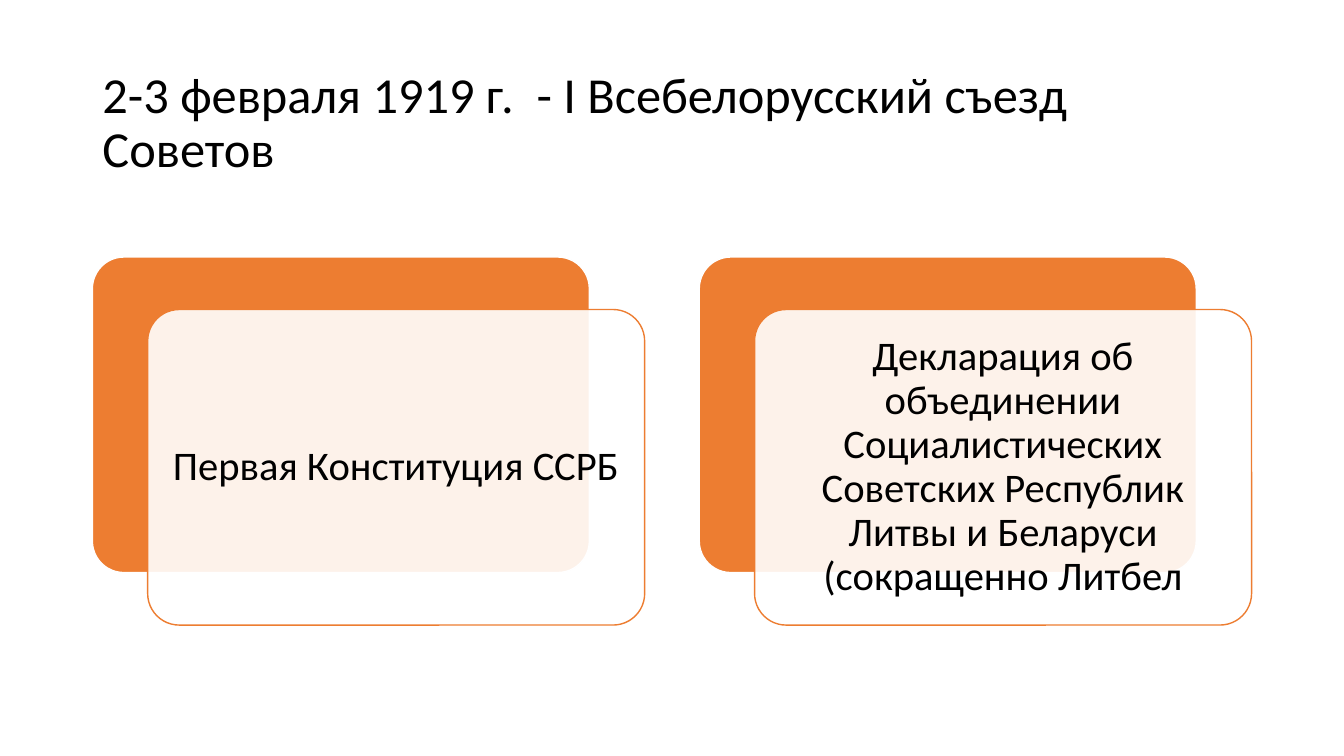
from dataclasses import dataclass

from lxml.etree import SubElement
from pptx import Presentation
from pptx.dml.color import RGBColor
from pptx.enum.shapes import MSO_SHAPE
from pptx.enum.text import MSO_ANCHOR, MSO_AUTO_SIZE, PP_ALIGN
from pptx.oxml.ns import qn
from pptx.util import Pt


@dataclass(frozen=True)
class Theme:
    font: str = "Calibri"
    title_size: float = 36
    card_size: float = 29
    text: RGBColor = RGBColor(0x00, 0x00, 0x00)
    accent: RGBColor = RGBColor(0xED, 0x7D, 0x31)
    paper: RGBColor = RGBColor(0xFF, 0xFF, 0xFF)
    card_opacity: int = 90
    corner: float = 0.1


THEME = Theme()
TITLE = "2-3 февраля 1919 г.  - I Всебелорусский съезд Советов"
DECISIONS = [
    "Первая Конституция ССРБ",
    "Декларация об объединении Социалистических Советских Республик "
    "Литвы и Беларуси (сокращенно Литбел",
]


def apply(target, formats):
    for name, value in formats.items():
        setattr(target, name, value)


def write_text(frame, wording, size, align, inset_x, inset_y, space_after=0):
    frame.text = wording
    apply(frame, {
        "word_wrap": True,
        "auto_size": MSO_AUTO_SIZE.NONE,
        "vertical_anchor": MSO_ANCHOR.MIDDLE,
        "margin_left": Pt(inset_x),
        "margin_right": Pt(inset_x),
        "margin_top": Pt(inset_y),
        "margin_bottom": Pt(inset_y),
    })
    paragraph = frame.paragraphs[0]
    apply(paragraph, {
        "alignment": align,
        "line_spacing": 0.9,
        "space_after": Pt(space_after),
    })
    font = paragraph.runs[0].font
    apply(font, {"name": THEME.font, "size": Pt(size)})
    font.color.rgb = THEME.text


def place_title(slide, left, top, width, height):
    title = slide.shapes.title
    apply(title, {"left": Pt(left), "top": Pt(top),
                  "width": Pt(width), "height": Pt(height)})
    write_text(title.text_frame, TITLE, THEME.title_size, PP_ALIGN.LEFT, 7.2, 3.6)


def add_panel(shapes, left, top, width, height, fill, line):
    panel = shapes.add_shape(MSO_SHAPE.ROUNDED_RECTANGLE,
                             Pt(left), Pt(top), Pt(width), Pt(height))
    panel.adjustments[0] = THEME.corner
    panel.shadow.inherit = False
    panel.fill.solid()
    panel.fill.fore_color.rgb = fill
    panel.line.color.rgb = line
    panel.line.width = Pt(1)
    return panel


def add_decision(shapes, wording, left, top, width, height):
    """Accent panel with a translucent text card shifted down and right."""
    shift_x, shift_y = 39.5, 37.5
    size = width - shift_x, height - shift_y
    add_panel(shapes, left, top, *size, THEME.accent, THEME.paper)
    card = add_panel(shapes, left + shift_x, top + shift_y, *size,
                     THEME.paper, THEME.accent)
    # Let the accent panel show through the card
    color = card.fill._xPr.find(qn("a:solidFill"))[0]
    SubElement(color, qn("a:alpha"), val=str(THEME.card_opacity * 1000))
    write_text(card.text_frame, wording, THEME.card_size, PP_ALIGN.CENTER,
               8.64, 8.64, space_after=10)


def add_decisions(slide, left, top, width, height):
    group = slide.shapes.add_group_shape()
    gap = 39
    column = (width - gap * (len(DECISIONS) - 1)) / len(DECISIONS)
    for index, wording in enumerate(DECISIONS):
        add_decision(group.shapes, wording,
                     left + index * (column + gap), top, column, height)


def build_congress_slide(deck):
    slide = deck.slides.add_slide(deck.slide_layouts[5])
    slide.background.fill.solid()
    slide.background.fill.fore_color.rgb = THEME.paper
    # Heading
    place_title(slide, 66, 44, 828, 89.3)
    # Decisions of the congress
    add_decisions(slide, 66, 183.6, 828, 262.9)


def main():
    deck = Presentation()
    apply(deck, {"slide_width": Pt(960), "slide_height": Pt(540)})
    build_congress_slide(deck)
    deck.save("out.pptx")


if __name__ == "__main__":
    main()
